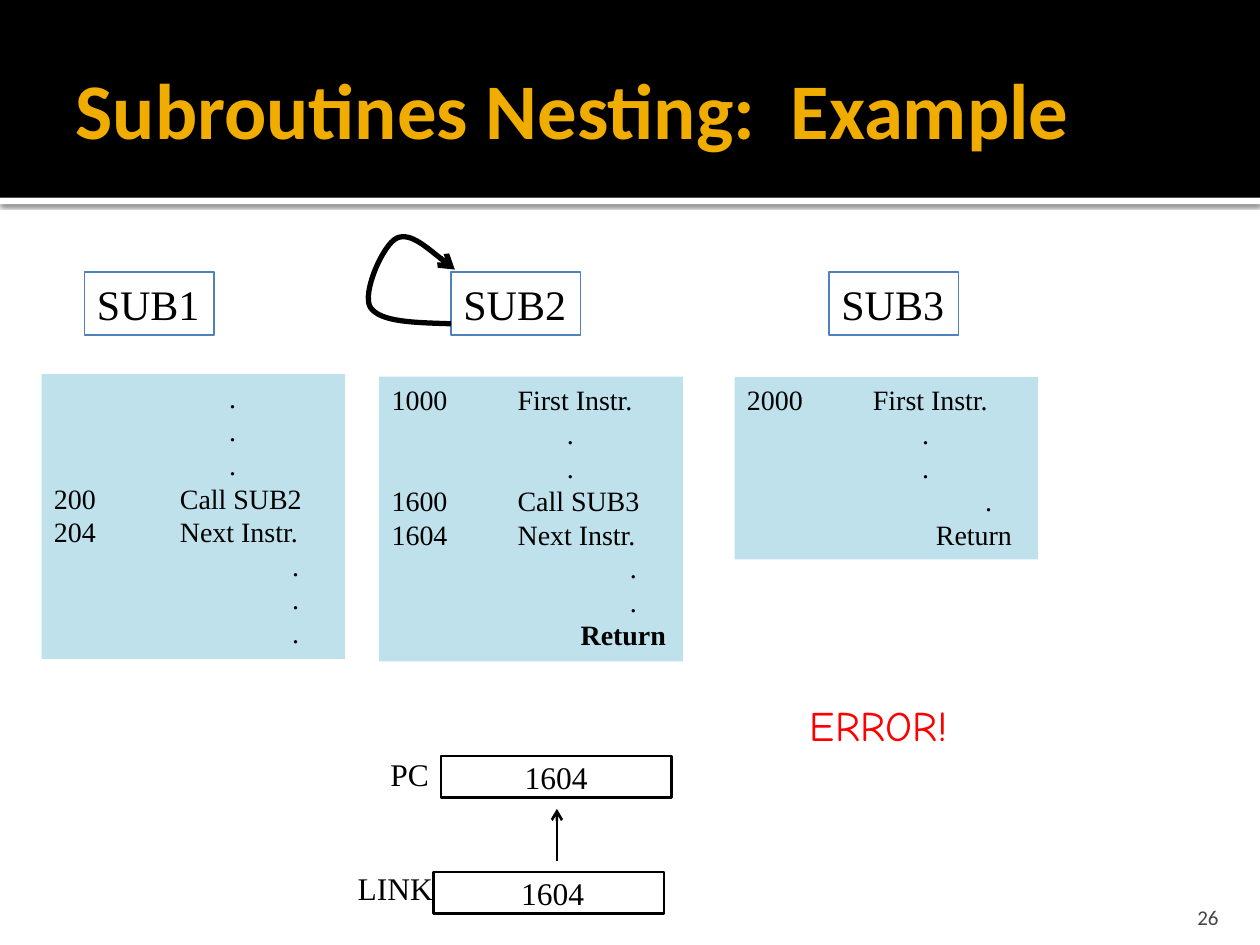
from lxml.etree import SubElement
from pptx import Presentation
from pptx.dml.color import RGBColor
from pptx.enum.shapes import MSO_CONNECTOR as Connector, MSO_SHAPE as Shape
from pptx.enum.text import MSO_ANCHOR as Anchor, MSO_AUTO_SIZE as AutoSize, PP_ALIGN as Align
from pptx.oxml.ns import qn
from pptx.util import Inches, Pt

COLORS = {
    "black": "000000",
    "white": "FFFFFF",
    "title": "F0AD00",
    "number": "454545",
    "border": "4F81BD",
    "code": "BFE1EB",
    "error": "FF0000",
}
SERIF = "Times New Roman"
OPERATION, DOT, RETURN, FAR_DOT = 1, 1.39, 1.5, 1.89

SUB1_CODE = [
    *[(DOT, ".")] * 3,
    (OPERATION, "200\tCall SUB2"),
    (OPERATION, "204\tNext Instr."),
    *[(FAR_DOT, ".")] * 3,
]
SUB2_CODE = [
    (OPERATION, "1000\tFirst Instr."),
    *[(DOT, ".")] * 2,
    (OPERATION, "1600\tCall SUB3"),
    (OPERATION, "1604\tNext Instr."),
    *[(FAR_DOT, ".")] * 2,
    (RETURN, "Return"),
]
SUB3_CODE = [
    (OPERATION, "2000\tFirst Instr."),
    *[(DOT, ".")] * 2,
    (FAR_DOT, "."),
    (RETURN, "Return"),
]


def color(name):
    return RGBColor.from_string(COLORS[name])


def style(paragraph, size, font=SERIF, ink="black", align=Align.LEFT, bold=False):
    paragraph.alignment = align
    paragraph.font.size = Pt(size)
    paragraph.font.name = font
    paragraph.font.bold = bold
    paragraph.font.color.rgb = color(ink)


def add_rectangle(slide, box, fill=None, line=None, width=0.75):
    rectangle = slide.shapes.add_shape(Shape.RECTANGLE, *map(Inches, box))
    rectangle.shadow.inherit = False
    if fill:
        rectangle.fill.solid()
        rectangle.fill.fore_color.rgb = color(fill)
    else:
        rectangle.fill.background()
    if line:
        rectangle.line.color.rgb = color(line)
        rectangle.line.width = Pt(width)
    else:
        rectangle.line.fill.background()
    return rectangle


def add_text(slide, box, text, size, wrap=False, **text_style):
    label = slide.shapes.add_textbox(*map(Inches, box))
    label.text_frame.word_wrap = wrap
    label.text_frame.text = text
    style(label.text_frame.paragraphs[0], size, **text_style)
    return label


def add_header(slide, text):
    title = slide.shapes.title
    edge = add_rectangle(slide, (0, 1.57, 10, 0.05), fill="white")
    effects = edge.element.spPr.find(qn("a:effectLst"))
    shadow = SubElement(effects, qn("a:outerShdw"), blurRad=str(Pt(2.5)),
                        dist=str(Pt(0.8)), dir="5400000", algn="t", rotWithShape="0")
    shade = SubElement(shadow, qn("a:srgbClr"), val=COLORS["black"])
    SubElement(shade, qn("a:alpha"), val="60000")
    band = add_rectangle(slide, (0, 0, 10, 1.57), fill="black")
    for background in (edge, band):
        title.element.addprevious(background.element)

    title.left, title.top, title.width, title.height = map(Inches, (0.5, 0.17, 9, 1.37))
    frame = title.text_frame
    frame.text = text
    frame.auto_size = AutoSize.NONE
    frame.vertical_anchor = Anchor.MIDDLE
    frame.margin_right = Inches(0.05)
    style(frame.paragraphs[0], 45, font="Calibri", ink="title", bold=True)


def add_name(slide, left, text):
    name = add_rectangle(slide, (left, 2.16, 1.03, 0.5), line="border")
    name.text_frame.word_wrap = False
    name.text_frame.text = text
    name.text_frame.vertical_anchor = Anchor.TOP
    style(name.text_frame.paragraphs[0], 24)


def set_position(paragraph, position, has_address):
    properties = paragraph._p.get_or_add_pPr()
    if has_address:
        tabs = SubElement(properties, qn("a:tabLst"))
        SubElement(tabs, qn("a:tab"), pos=str(Inches(position)), algn="l")
    else:
        properties.set("marL", str(Inches(position)))
        properties.set("indent", "0")


def add_code(slide, box, lines, bold_return=False):
    frame = add_rectangle(slide, box, fill="code").text_frame
    frame.vertical_anchor = Anchor.TOP
    frame.word_wrap = True
    for index, (position, text) in enumerate(lines):
        paragraph = frame.add_paragraph() if index else frame.paragraphs[0]
        set_position(paragraph, position, "\t" in text)
        paragraph.add_run().text = text
        style(paragraph, 16, bold=bold_return and text == "Return")


def add_register(slide, box, value):
    register = add_rectangle(slide, box, line="black", width=1.5)
    register.text_frame.text = value
    register.text_frame.vertical_anchor = Anchor.MIDDLE
    style(register.text_frame.paragraphs[0], 18, align=Align.CENTER)


def add_arrowhead(shape, width):
    shape.line.color.rgb = color("black")
    shape.line.width = Pt(width)
    SubElement(shape.line._get_or_add_ln(), qn("a:tailEnd"), type="arrow")


def add_arrow(slide, start, end):
    arrow = slide.shapes.add_connector(Connector.STRAIGHT, *map(Inches, start + end))
    add_arrowhead(arrow, 1.5)
    SubElement(arrow.element.spPr, qn("a:effectLst"))


def add_curved_arrow(slide, start, controls):
    builder = slide.shapes.build_freeform(*map(Inches, start))
    builder.add_line_segments([(Inches(x), Inches(y)) for x, y in controls], close=False)
    curve = builder.convert_to_shape()
    path = next(curve.element.iter(qn("a:path")))
    segments = path.findall(qn("a:lnTo"))
    for first in range(0, len(segments), 3):
        bezier = SubElement(path, qn("a:cubicBezTo"))
        for segment in segments[first:first + 3]:
            bezier.append(segment[0])
            path.remove(segment)
    curve.shadow.inherit = False
    curve.fill.background()
    add_arrowhead(curve, 3)


def main():
    presentation = Presentation()
    presentation.slide_width, presentation.slide_height = Inches(10), Inches(7.5)
    slide = presentation.slides.add_slide(presentation.slide_layouts[5])

    add_header(slide, "Subroutines Nesting:  Example")
    number = add_text(slide, (8.97, 7.08, 0.8, 0.3), "26", 12, wrap=True,
                      font="Calibri", ink="number", align=Align.RIGHT)
    number.text_frame.vertical_anchor = Anchor.BOTTOM
    number.text_frame.margin_bottom = 0

    for left, name in ((0.67, "SUB1"), (3.58, "SUB2"), (6.58, "SUB3")):
        add_name(slide, left, name)
    add_code(slide, (3.01, 2.99, 2.41, 2.26), SUB2_CODE, bold_return=True)
    add_code(slide, (0.33, 2.97, 2.41, 2.26), SUB1_CODE)
    add_code(slide, (5.83, 2.99, 2.41, 1.45), SUB3_CODE)

    add_register(slide, (3.5, 6, 1.83, 0.33), "1604")
    add_register(slide, (3.44, 6.92, 1.83, 0.33), " 1604")
    add_text(slide, (3, 5.94, 0.51, 0.4), "PC", 18)
    add_text(slide, (2.74, 6.85, 0.81, 0.4), "LINK", 18)
    add_arrow(slide, (4.42, 6.83), (4.42, 6.42))
    add_curved_arrow(slide, (3.58, 2.57), [
        (3.3, 2.56), (3.02, 2.56), (2.94, 2.44),
        (2.87, 2.33), (3.04, 1.94), (3.15, 1.89),
        (3.26, 1.84), (3.61, 2.14), (3.61, 2.14),
    ])
    add_text(slide, (6.33, 5.5, 1.73, 0.5), "ERROR!", 24, wrap=True,
             font="Comic Neue", ink="error")

    presentation.save("out.pptx")


if __name__ == "__main__":
    main()
